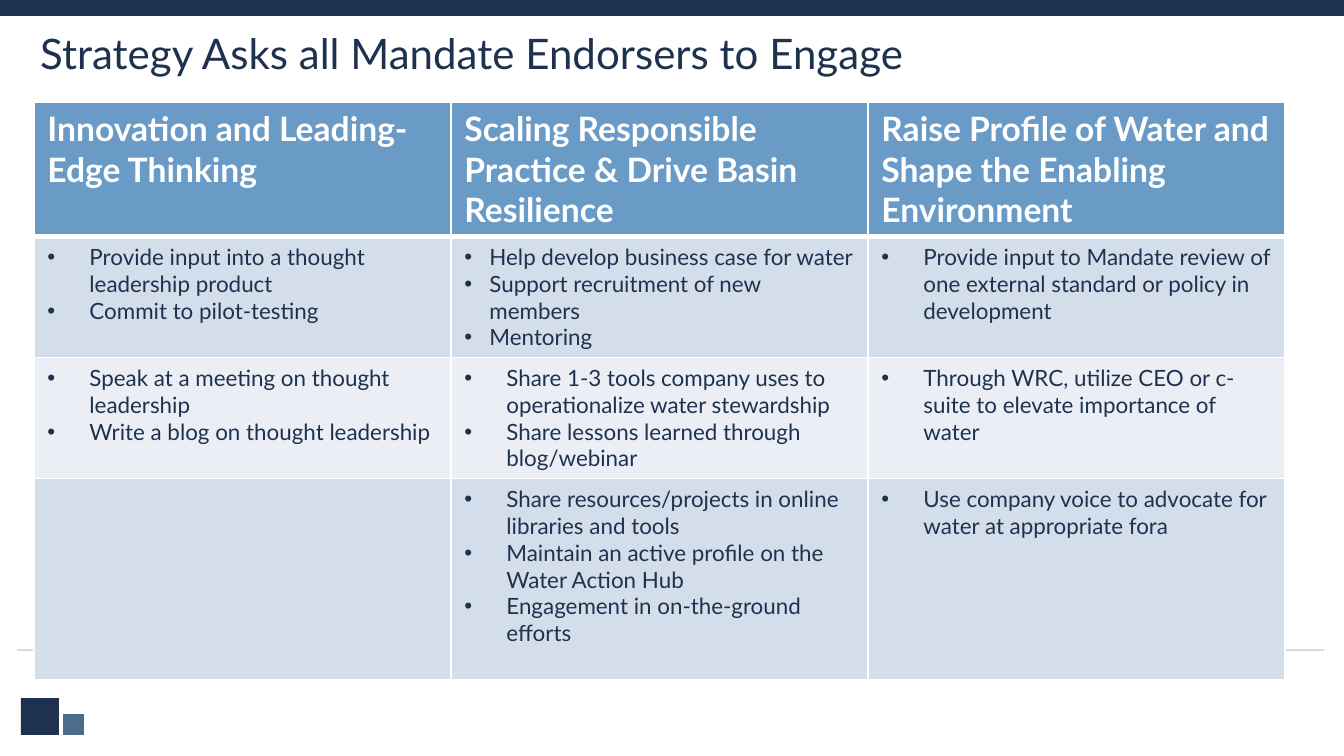
from typing import NamedTuple

from lxml.etree import SubElement
from pptx import Presentation
from pptx.dml.color import RGBColor
from pptx.enum.shapes import MSO_CONNECTOR, MSO_SHAPE
from pptx.enum.text import MSO_ANCHOR
from pptx.oxml.ns import qn
from pptx.util import Emu, Pt

EMU_PER_PX = 6804
FONT = "Lato"
NAVY, SLATE, BLUE, WHITE, GREY = "1E3250", "4D6B8B", "699BC6", "FFFFFF", "D9D9D9"
BANDS = ["D4DEEA", "EBEFF5"]
WIDE_INDENT, NARROW_INDENT = 42, 25


class Block(NamedTuple):
    x: int
    y: int
    w: int
    h: int
    color: str


class Cell(NamedTuple):
    lines: list[str]
    indent: int = WIDE_INDENT


BLOCKS = [
    Block(21, 698, 38, 37, NAVY),
    Block(63, 714, 21, 21, SLATE),
    Block(0, 0, 1344, 16, NAVY),
]
COL_WIDTH = 417
ROW_HEIGHTS = [134, 121, 121, 201]
HEADERS = [
    "Innovation and Leading-Edge Thinking",
    "Scaling Responsible Practice & Drive Basin Resilience",
    "Raise Profile of Water and Shape the Enabling Environment",
]
BODY = [
    [
        Cell(["Provide input into a thought leadership product", "Commit to pilot-testing"]),
        Cell(["Help develop business case for water", "Support recruitment of new members",
              "Mentoring"], NARROW_INDENT),
        Cell(["Provide input to Mandate review of one external standard or policy in development"]),
    ],
    [
        Cell(["Speak at a meeting on thought leadership", "Write a blog on thought leadership"]),
        Cell(["Share 1-3 tools company uses to operationalize water stewardship",
              "Share lessons learned through blog/webinar"]),
        Cell(["Through WRC, utilize CEO or c-suite to elevate importance of water"]),
    ],
    [
        Cell([]),
        Cell(["Share resources/projects in online libraries and tools",
              "Maintain an active profile on the Water Action Hub",
              "Engagement in on-the-ground efforts"]),
        Cell(["Use company voice to advocate for water at appropriate fora"]),
    ],
]


def px(n: int) -> Emu:
    return Emu(n * EMU_PER_PX)


def rgb(color: str) -> RGBColor:
    return RGBColor.from_string(color)


def write(tf, lines: list[str], *, size: float, color: str = NAVY,
          bold: bool = False, indent: int = 0, spacing: float = 1.0) -> None:
    tf.word_wrap = True
    for i, line in enumerate(lines):
        p = tf.add_paragraph() if i else tf.paragraphs[0]
        p.line_spacing = spacing
        if indent:
            pPr = p._p.get_or_add_pPr()
            pPr.set("marL", str(px(indent)))
            pPr.set("indent", str(px(-indent)))
            SubElement(pPr, qn("a:buFont"), typeface="Arial")
            SubElement(pPr, qn("a:buChar"), char="•")
        r = p.add_run()
        r.text = line
        r.font.name = FONT
        r.font.size = Pt(size)
        r.font.bold = bold
        r.font.color.rgb = rgb(color)


def draw_block(s, block: Block) -> None:
    sp = s.shapes.add_shape(MSO_SHAPE.RECTANGLE, *map(px, block[:4]))
    sp.shadow.inherit = False
    sp.fill.solid()
    sp.fill.fore_color.rgb = rgb(block.color)
    sp.line.fill.background()


def draw_rule(s, x1: int, x2: int, y: int) -> None:
    line = s.shapes.add_connector(MSO_CONNECTOR.STRAIGHT, px(x1), px(y), px(x2), px(y))
    line.line.color.rgb = rgb(GREY)
    line.line.width = Pt(0.75)
    SubElement(line._element.spPr, qn("a:effectLst"))


def style_cell(cell, color: str, top: int = 1, bottom: int = 1) -> None:
    tcPr = cell._tc.get_or_add_tcPr()
    for side, width in (("L", 1), ("R", 1), ("T", top), ("B", bottom)):
        ln = SubElement(tcPr, qn(f"a:ln{side}"), w=str(Pt(width)))
        SubElement(SubElement(ln, qn("a:solidFill")), qn("a:srgbClr"), val=WHITE)
    cell.fill.solid()
    cell.fill.fore_color.rgb = rgb(color)
    cell.vertical_anchor = MSO_ANCHOR.TOP


def draw_table(s, x: int, y: int) -> None:
    cols = len(HEADERS)
    table = s.shapes.add_table(len(ROW_HEIGHTS), cols, px(x), px(y),
                               px(cols * COL_WIDTH), px(sum(ROW_HEIGHTS))).table
    for col in table.columns:
        col.width = px(COL_WIDTH)
    for row, height in zip(table.rows, ROW_HEIGHTS):
        row.height = px(height)
    for c, header in enumerate(HEADERS):
        cell = table.cell(0, c)
        style_cell(cell, BLUE, bottom=3)
        write(cell.text_frame, [header], size=18, color=WHITE, bold=True)
    for r, row in enumerate(BODY):
        for c, content in enumerate(row):
            cell = table.cell(r + 1, c)
            style_cell(cell, BANDS[r % 2], top=1 if r else 3)
            write(cell.text_frame, content.lines, size=12, indent=content.indent)


def main() -> None:
    prs = Presentation()
    prs.slide_width, prs.slide_height = px(1344), px(756)
    s = prs.slides.add_slide(prs.slide_layouts[6])
    for block in BLOCKS:
        draw_block(s, block)
    draw_rule(s, 17, 1324, 650)
    title = s.shapes.add_textbox(px(27), px(27), px(1216), px(67))
    write(title.text_frame, ["Strategy Asks all Mandate Endorsers to Engage"],
          size=22.5, spacing=0.9)
    draw_table(s, 34, 102)
    prs.save("out.pptx")


if __name__ == "__main__":
    main()
